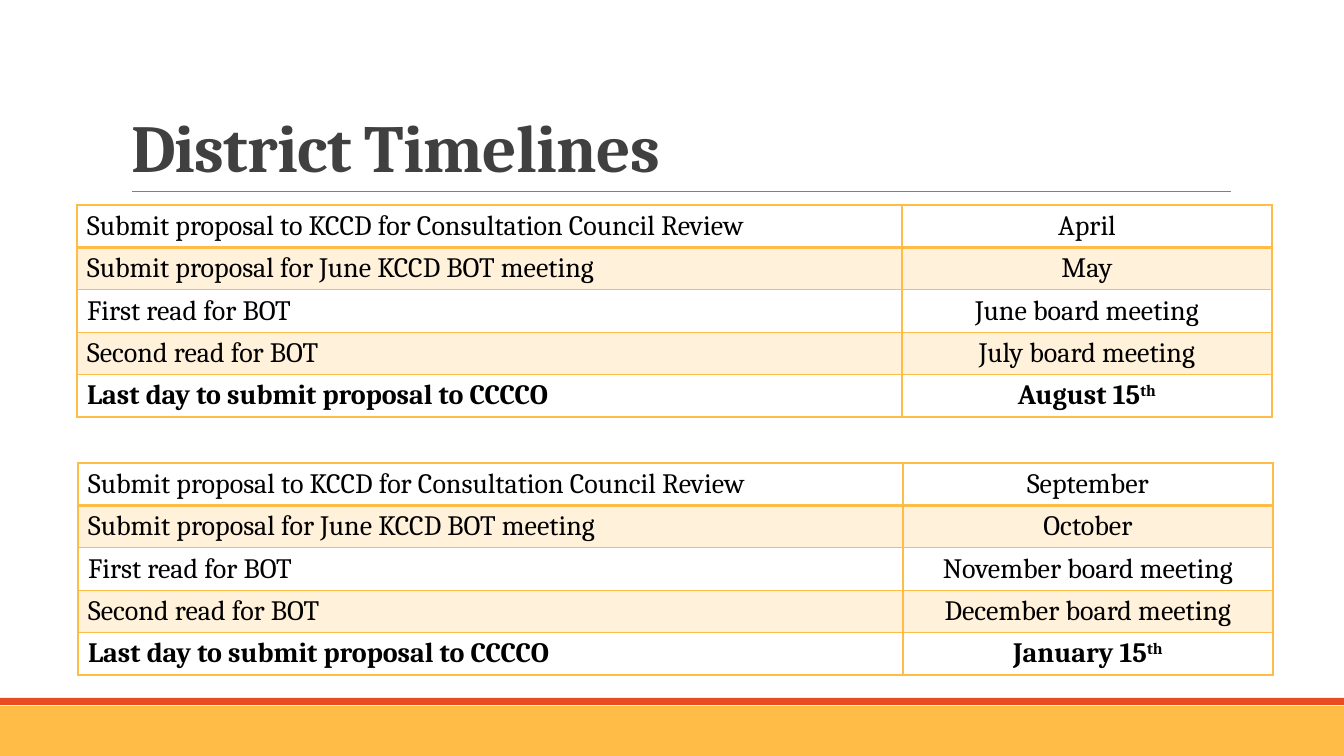
"""Build the District Timelines slide with its two schedule tables."""
from lxml.etree import SubElement
from pptx import Presentation
from pptx.dml.color import RGBColor
from pptx.enum.shapes import MSO_CONNECTOR, MSO_SHAPE
from pptx.enum.text import MSO_ANCHOR, MSO_AUTO_SIZE, PP_ALIGN
from pptx.oxml import parse_xml
from pptx.oxml.ns import nsdecls, qn
from pptx.util import Emu, Pt

TITLE = "District Timelines"
STEPS = [
    "Submit proposal to KCCD for Consultation Council Review",
    "Submit proposal for June KCCD BOT meeting",
    "First read for BOT",
    "Second read for BOT",
    "Last day to submit proposal to CCCCO",
]
SCHEDULES = [
    {"left": 77, "top": 205, "dates": ["April", "May", "June board meeting",
                                       "July board meeting", "August 15"]},
    {"left": 78, "top": 463, "dates": ["September", "October", "November board meeting",
                                       "December board meeting", "January 15"]},
]
ORDINAL = "th"
COLORS = {"amber": "FFBD47", "red": "E84C22", "rule": "808080",
          "title": "404040", "text": "000000"}
BANDS = [("amber", 706, 50), ("red", 698, 7)]
COLUMNS = [825, 370]
ROW_HEIGHT = 42
BAND_ALPHA = "20000"
SLIDE_WIDTH, SLIDE_HEIGHT = 1344, 756
SCALE = 12192000 / SLIDE_WIDTH
TITLE_FONT = {"name": "Cambria", "size": Pt(48), "bold": True}
CELL_FONT = {"name": "Cambria", "size": Pt(20)}


def px(length):
    return Emu(round(length * SCALE))


def color(name):
    return RGBColor.from_string(COLORS[name])


def style(span, values, color_name):
    for name, value in values.items():
        setattr(span.font, name, value)
    span.font.color.rgb = color(color_name)


def add_bands(slide):
    for name, top, height in BANDS:
        band = slide.shapes.add_shape(MSO_SHAPE.RECTANGLE, 0, px(top),
                                      px(SLIDE_WIDTH), px(height))
        band.shadow.inherit = False
        band.fill.solid()
        band.fill.fore_color.rgb = color(name)
        band.line.fill.background()


def add_rule(slide):
    rule = slide.shapes.add_connector(MSO_CONNECTOR.STRAIGHT, px(132), px(191),
                                      px(1231), px(191))
    rule.line.color.rgb = color("rule")
    rule.line.width = Pt(0.5)
    SubElement(rule._element.spPr, qn("a:effectLst"))


def add_title(slide):
    title = slide.shapes.title
    box = {"left": 121, "top": 31, "width": 1109, "height": 160}
    for name, value in box.items():
        setattr(title, name, px(value))
    frame = title.text_frame
    frame.auto_size = MSO_AUTO_SIZE.NONE
    frame.word_wrap = True
    frame.vertical_anchor = MSO_ANCHOR.BOTTOM
    para = frame.paragraphs[0]
    para.alignment = PP_ALIGN.LEFT
    para.line_spacing = 0.85
    span = para.add_run()
    span.text = TITLE
    style(span, TITLE_FONT, "title")
    span.font._element.set("spc", "-50")


def add_borders(cell, widths):
    properties = cell._tc.get_or_add_tcPr()
    for index, (side, width) in enumerate(widths.items()):
        properties.insert(index, parse_xml(
            f'<a:ln{side} {nsdecls("a")} w="{Pt(width)}"><a:solidFill>'
            f'<a:srgbClr val="{COLORS["amber"]}"/></a:solidFill></a:ln{side}>'))


def fill_cell(cell, row, column, text):
    last = row == len(STEPS) - 1
    para = cell.text_frame.paragraphs[0]
    para.alignment = PP_ALIGN.CENTER if column else PP_ALIGN.LEFT
    parts = [text, ORDINAL] if last and column else [text]
    for index, part in enumerate(parts):
        span = para.add_run()
        span.text = part
        style(span, CELL_FONT | {"bold": last}, "text")
        if index:
            span.font._element.set("baseline", "30000")
    if row % 2:
        cell.fill.solid()
        cell.fill.fore_color.rgb = color("amber")
        shade = cell._tc.tcPr.find(f".//{qn('a:srgbClr')}")
        SubElement(shade, qn("a:alpha"), val=BAND_ALPHA)
    else:
        cell.fill.background()
    add_borders(cell, {"L": 1, "R": 1, "T": 2 if row == 1 else 1,
                       "B": 2 if row == 0 else 1})


def add_schedule(slide, left, top, dates):
    frame = slide.shapes.add_table(len(STEPS), len(COLUMNS), px(left), px(top),
                                   px(sum(COLUMNS)), px(ROW_HEIGHT * len(STEPS)))
    table = frame.table
    table.first_row = table.horz_banding = False
    for column, width in zip(table.columns, COLUMNS):
        column.width = px(width)
    for row, texts in enumerate(zip(STEPS, dates)):
        table.rows[row].height = px(ROW_HEIGHT)
        for column, text in enumerate(texts):
            fill_cell(table.cell(row, column), row, column, text)


def main():
    deck = Presentation()
    deck.slide_width, deck.slide_height = px(SLIDE_WIDTH), px(SLIDE_HEIGHT)
    page = deck.slides.add_slide(deck.slide_layouts[5])
    add_bands(page)
    add_rule(page)
    add_title(page)
    for schedule in SCHEDULES:
        add_schedule(page, **schedule)
    deck.save("out.pptx")


if __name__ == "__main__":
    main()
